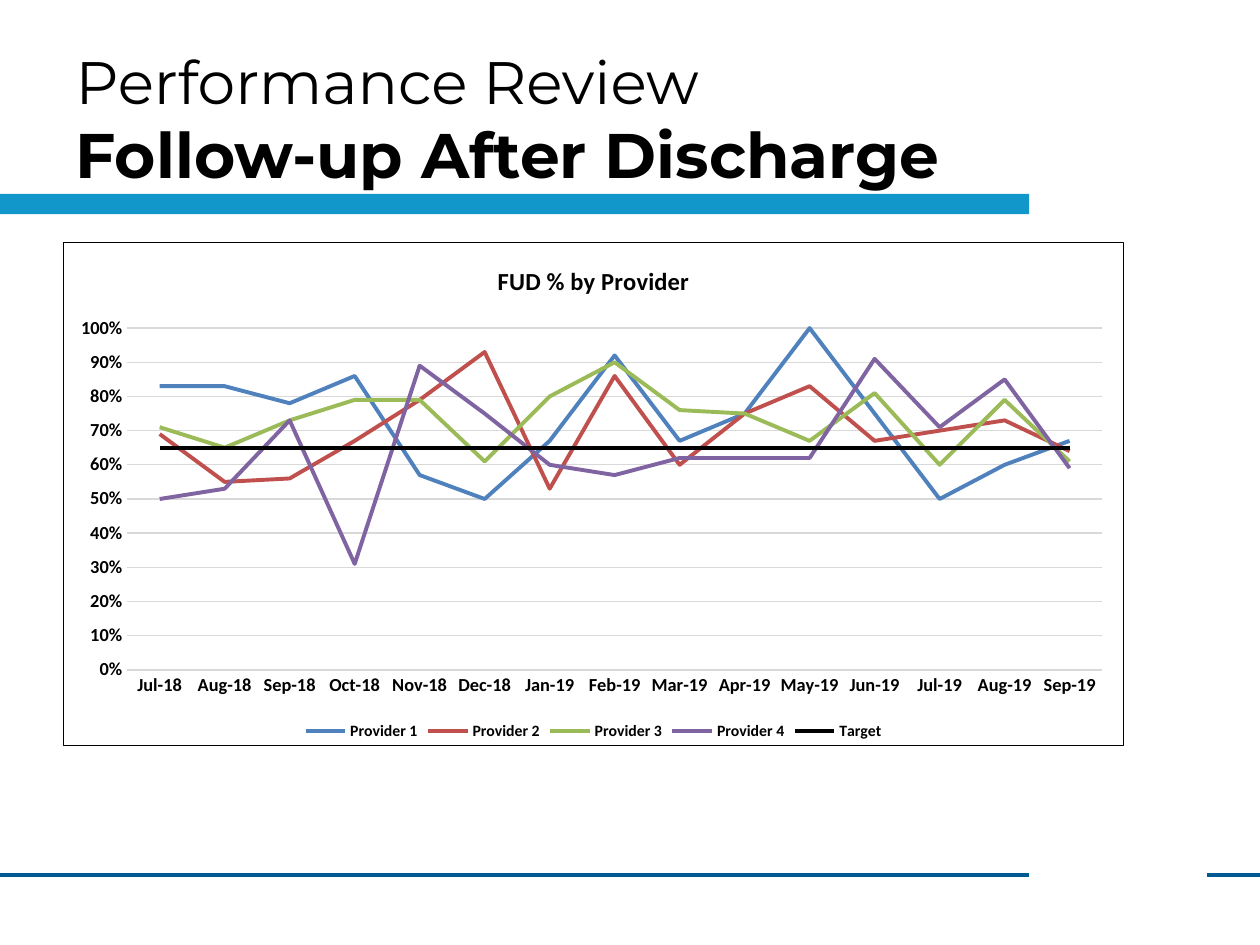
from lxml import etree
from pptx import Presentation
from pptx.chart.data import CategoryChartData
from pptx.dml.color import RGBColor
from pptx.enum.chart import XL_CHART_TYPE, XL_LEGEND_POSITION, XL_MARKER_STYLE, XL_TICK_MARK
from pptx.enum.shapes import MSO_CONNECTOR, MSO_SHAPE
from pptx.enum.text import MSO_ANCHOR, MSO_AUTO_SIZE, PP_ALIGN
from pptx.oxml import parse_xml
from pptx.oxml.ns import nsdecls, qn
from pptx.util import Cm, Pt

COLORS = {
    "text": "000000", "paper": "FFFFFF", "bar": "1197CA", "rule": "005B93",
    "grid": "D9D9D9", "border": "000000",
}
PAGE_WIDTH, PAGE_HEIGHT = 25.4, 19.05
RULE_TOP, BAR_WIDTH = 17.63, 20.75

MONTHS = ["Jul-18", "Aug-18", "Sep-18", "Oct-18", "Nov-18", "Dec-18", "Jan-19", "Feb-19",
          "Mar-19", "Apr-19", "May-19", "Jun-19", "Jul-19", "Aug-19", "Sep-19"]
SERIES = [
    ("Provider 1", "4F81BD", [0.83, 0.83, 0.78, 0.86, 0.57, 0.5, 0.67, 0.92,
                              0.67, 0.75, 1, 0.75, 0.5, 0.6, 0.67]),
    ("Provider 2", "C0504D", [0.69, 0.55, 0.56, 0.67, 0.79, 0.93, 0.53, 0.86,
                              0.6, 0.75, 0.83, 0.67, 0.7, 0.73, 0.64]),
    ("Provider 3", "9BBB59", [0.71, 0.65, 0.73, 0.79, 0.79, 0.61, 0.8, 0.9,
                              0.76, 0.75, 0.67, 0.81, 0.6, 0.79, 0.61]),
    ("Provider 4", "8064A2", [0.5, 0.53, 0.73, 0.31, 0.89, 0.75, 0.6, 0.57,
                              0.62, 0.62, 0.62, 0.91, 0.71, 0.85, 0.59]),
    ("Target", "000000", [0.65] * len(MONTHS)),
]


def color(name):
    return RGBColor.from_string(COLORS[name])


def apply(target, **values):
    for name, value in values.items():
        setattr(target, name, value)


def style_font(font, size, bold=True, name="Calibri"):
    apply(font, size=Pt(size), bold=bold, name=name)
    font.color.rgb = color("text")


def style_line(line, rgb, width):
    line.color.rgb = rgb
    line.width = Pt(width)


def add_rule(page, start, end):
    rule = page.shapes.add_connector(MSO_CONNECTOR.STRAIGHT, Cm(start), Cm(RULE_TOP),
                                     Cm(end), Cm(RULE_TOP))
    style_line(rule.line, color("rule"), 2.25)
    etree.SubElement(rule._element.spPr, qn("a:effectLst"))


def add_bar(page):
    bar = page.shapes.add_shape(MSO_SHAPE.RECTANGLE, Cm(0), Cm(3.91), Cm(BAR_WIDTH), Cm(0.41))
    bar.shadow.inherit = False
    bar.fill.solid()
    bar.fill.fore_color.rgb = color("bar")
    bar.line.fill.background()


def fill_title(page):
    title = page.shapes.title
    apply(title, left=Cm(1.27), top=Cm(0.76), width=Cm(19.48), height=Cm(3.18))
    frame = title.text_frame
    apply(frame, word_wrap=True, auto_size=MSO_AUTO_SIZE.NONE,
          vertical_anchor=MSO_ANCHOR.MIDDLE)
    para = frame.paragraphs[0]
    apply(para, alignment=PP_ALIGN.LEFT, line_spacing=Pt(42.6), space_before=Pt(0))
    for text, size, bold in [("Performance Review", 34.2, False),
                             ("Follow-up After Discharge", 36, True)]:
        if para.runs:
            para.add_line_break()
        span = para.add_run()
        span.text = text
        style_font(span.font, size, bold, "Montserrat")


def frame_chart(chart):
    """Give the chart area a white fill and a thin square border."""
    space = chart._chartSpace
    space.find(qn("c:txPr")).addprevious(parse_xml(
        f'<c:spPr {nsdecls("c", "a")}>'
        f'<a:solidFill><a:srgbClr val="{COLORS["paper"]}"/></a:solidFill>'
        f'<a:ln w="{Pt(0.75)}"><a:solidFill><a:srgbClr val="{COLORS["border"]}"/>'
        '</a:solidFill></a:ln></c:spPr>'))
    for corners in space.findall(qn("c:roundedCorners")):
        space.remove(corners)
    space.find(qn("c:date1904")).addnext(
        parse_xml(f'<c:roundedCorners {nsdecls("c")} val="0"/>'))


def place_plot(chart, **fractions):
    """Fix the inner plot area as fractions of the chart area."""
    plot_area = chart._chartSpace.chart.plotArea
    for layout in plot_area.findall(qn("c:layout")):
        plot_area.remove(layout)
    sizes = "".join(f'<c:{key} val="{value}"/>' for key, value in fractions.items())
    plot_area.insert(0, parse_xml(
        f'<c:layout {nsdecls("c")}><c:manualLayout><c:layoutTarget val="inner"/>'
        f'<c:xMode val="edge"/><c:yMode val="edge"/>{sizes}</c:manualLayout></c:layout>'))


def format_axes(chart):
    months, percent = chart.category_axis, chart.value_axis
    for axis in (months, percent):
        apply(axis, major_tick_mark=XL_TICK_MARK.NONE, minor_tick_mark=XL_TICK_MARK.NONE)
        style_font(axis.tick_labels.font, 10.5)
    style_line(months.format.line, color("grid"), 0.75)
    apply(percent, minimum_scale=0, maximum_scale=1, major_unit=0.1, has_major_gridlines=True)
    apply(percent.tick_labels, number_format="0%", number_format_is_linked=False)
    percent.format.line.fill.background()
    style_line(percent.major_gridlines.format.line, color("grid"), 0.75)


def add_provider_chart(page):
    data = CategoryChartData(number_format="0%")
    data.categories = MONTHS
    for name, _, values in SERIES:
        data.add_series(name, values)
    chart = page.shapes.add_chart(XL_CHART_TYPE.LINE, Cm(1.27), Cm(4.88),
                                  Cm(21.39), Cm(10.16), data).chart
    style_font(chart.font, 10)
    frame_chart(chart)
    place_plot(chart, x=0.06, y=0.17, w=0.92, h=0.68)

    chart.has_title = True
    chart.chart_title.include_in_layout = False
    para = chart.chart_title.text_frame.paragraphs[0]
    span = para.add_run()
    span.text = "FUD % by Provider"
    style_font(span.font, 14)

    chart.has_legend = True
    apply(chart.legend, position=XL_LEGEND_POSITION.BOTTOM, include_in_layout=False)
    style_font(chart.legend.font, 9)
    format_axes(chart)

    chart.plots[0].vary_by_categories = False
    for series, (_, rgb, _) in zip(chart.plots[0].series, SERIES):
        series.smooth = False
        series.marker.style = XL_MARKER_STYLE.NONE
        style_line(series.format.line, RGBColor.from_string(rgb), 2.25)


def main():
    deck = Presentation()
    apply(deck, slide_width=Cm(PAGE_WIDTH), slide_height=Cm(PAGE_HEIGHT))
    page = deck.slides.add_slide(deck.slide_layouts[5])
    add_rule(page, 0, BAR_WIDTH)
    add_rule(page, 24.33, PAGE_WIDTH)
    add_bar(page)
    fill_title(page)
    add_provider_chart(page)
    deck.save("out.pptx")


if __name__ == "__main__":
    main()
